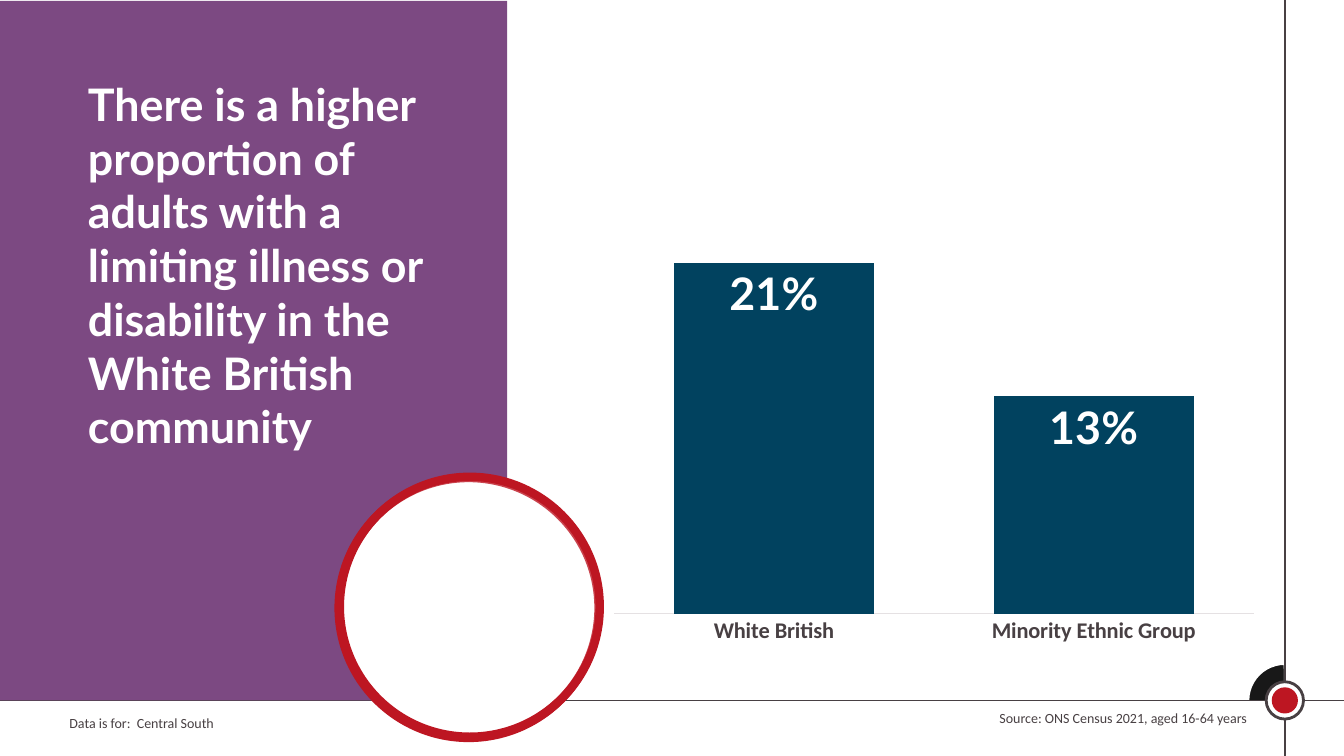
from dataclasses import dataclass
from lxml.etree import SubElement
from pptx import Presentation
from pptx.chart.data import CategoryChartData
from pptx.dml.color import RGBColor
from pptx.enum.chart import XL_CHART_TYPE, XL_LABEL_POSITION, XL_TICK_MARK
from pptx.enum.shapes import MSO_CONNECTOR, MSO_SHAPE
from pptx.enum.text import MSO_ANCHOR, MSO_AUTO_SIZE, PP_ALIGN
from pptx.oxml.ns import qn
from pptx.util import Cm, Pt


@dataclass(frozen=True)
class Theme:
    white: str = "FFFFFF"
    black: str = "181818"
    grey: str = "484043"
    pale: str = "E5E1E3"
    red: str = "BD1622"
    purple: str = "7C4982"
    navy: str = "01425F"
    head: str = "Lato"
    body: str = "Calibri"
    large: int = 32
    label: int = 16
    small: int = 10


class Page:
    def __init__(self, slide, theme):
        self.slide = slide
        self.shapes = slide.shapes
        self.theme = theme

    def font(self, font, size, color, name, bold=False):
        font.size = Pt(size)
        font.color.rgb = RGBColor.from_string(color)
        font.name = name
        font.bold = bold

    def shape(self, kind, box, fill, line=None, width=0, alpha=None):
        shape = self.shapes.add_shape(kind, *map(Cm, box))
        shape.shadow.inherit = False
        shape.fill.solid()
        shape.fill.fore_color.rgb = RGBColor.from_string(fill)
        if alpha is not None:
            color = shape.fill._xPr.find(".//" + qn("a:srgbClr"))
            SubElement(color, qn("a:alpha")).set("val", str(alpha * 1000))
        if line:
            shape.line.color.rgb = RGBColor.from_string(line)
            shape.line.width = Pt(width)
        else:
            shape.line.fill.background()
        return shape

    def disc(self, x, y, size, *style, **extra):
        box = (x - size / 2, y - size / 2, size, size)
        return self.shape(MSO_SHAPE.OVAL, box, *style, **extra)

    def line(self, *ends):
        line = self.shapes.add_connector(MSO_CONNECTOR.STRAIGHT, *map(Cm, ends))
        line.line.color.rgb = RGBColor.from_string(self.theme.grey)
        line.line.width = Pt(1)
        SubElement(line._element.spPr, qn("a:effectLst"))

    def note(self, text, box, align=PP_ALIGN.LEFT):
        frame = self.shapes.add_textbox(*map(Cm, box)).text_frame
        frame.word_wrap = True
        para = frame.paragraphs[0]
        para.text = text
        para.alignment = align
        self.font(para.font, self.theme.small, self.theme.grey, self.theme.body)

    def title(self, text, box):
        title = self.shapes.title
        title.left, title.top, title.width, title.height = map(Cm, box)
        frame = title.text_frame
        frame.text = text
        frame.word_wrap = True
        frame.auto_size = MSO_AUTO_SIZE.NONE
        frame.vertical_anchor = MSO_ANCHOR.TOP
        para = frame.paragraphs[0]
        para.alignment = PP_ALIGN.LEFT
        para.line_spacing = 1.0
        self.font(para.font, self.theme.large, self.theme.white, self.theme.head, True)
        tree = title._element.getparent()
        tree.append(title._element)

    def chart(self, cats, vals, box):
        theme = self.theme
        data = CategoryChartData()
        data.categories = cats
        data.add_series("Series 1", vals)
        frame = self.shapes.add_chart(XL_CHART_TYPE.COLUMN_CLUSTERED, *map(Cm, box), data)
        chart = frame.chart
        chart.has_legend = False
        chart.has_title = False
        self.font(chart.font, theme.label, theme.grey, theme.body)

        value = chart.value_axis
        value.visible = False
        value.has_major_gridlines = False
        value.minimum_scale = 0
        value.maximum_scale = 0.25

        axis = chart.category_axis
        axis.major_tick_mark = XL_TICK_MARK.NONE
        axis.format.line.color.rgb = RGBColor.from_string(theme.pale)
        axis.format.line.width = Pt(0.75)
        self.font(axis.tick_labels.font, theme.label, theme.grey, theme.body, True)

        plot = chart.plots[0]
        plot.gap_width = 60
        plot.vary_by_categories = False
        bars = plot.series[0]
        bars.format.fill.solid()
        bars.format.fill.fore_color.rgb = RGBColor.from_string(theme.navy)
        labels = bars.data_labels
        labels.show_value = True
        labels.position = XL_LABEL_POSITION.INSIDE_END
        labels.number_format = "0%"
        labels.number_format_is_linked = False
        self.font(labels.font, theme.large, theme.white, theme.head, True)


def main():
    deck = Presentation()
    deck.slide_width, deck.slide_height = Cm(33.87), Cm(19.05)
    theme = Theme()
    page = Page(deck.slides.add_slide(deck.slide_layouts[5]), theme)
    x, y = 32.38, 17.65

    page.note("Data is for:  Central South", (1.5, 17.88, 11.15, 0.69))
    pie = page.shape(MSO_SHAPE.PIE, (x - 0.92, y - 0.92, 1.84, 1.84), theme.black, theme.white, 1.5)
    pie.adjustments[0], pie.adjustments[1] = 106.62, 162
    page.line(x, 0, x, 19.05)
    page.line(0, y, 33.87, y)
    page.disc(x, y, 0.94, theme.white, theme.grey, 2)
    page.disc(x, y, 0.66, theme.red)

    page.shape(MSO_SHAPE.RECTANGLE, (-0.02, 0.02, 12.8, 17.63), theme.purple)
    page.disc(11.81, 15.32, 6.55, theme.white, theme.red, 6)
    page.disc(11.84, 15.29, 6.55, theme.white, theme.red, 6, alpha=20)

    page.chart(("White British", "Minority Ethnic Group"), (0.21, 0.13), (15.14, 4.7, 16.79, 11.79))
    page.title(
        "There is a higher proportion of adults with a limiting illness "
        "or disability in the White British community",
        (1.96, 1.8, 9.58, 9.83),
    )
    page.note("Source: ONS Census 2021, aged 16-64 years", (24.18, 17.75, 7.49, 0.69), PP_ALIGN.RIGHT)
    deck.save("out.pptx")


if __name__ == "__main__":
    main()
